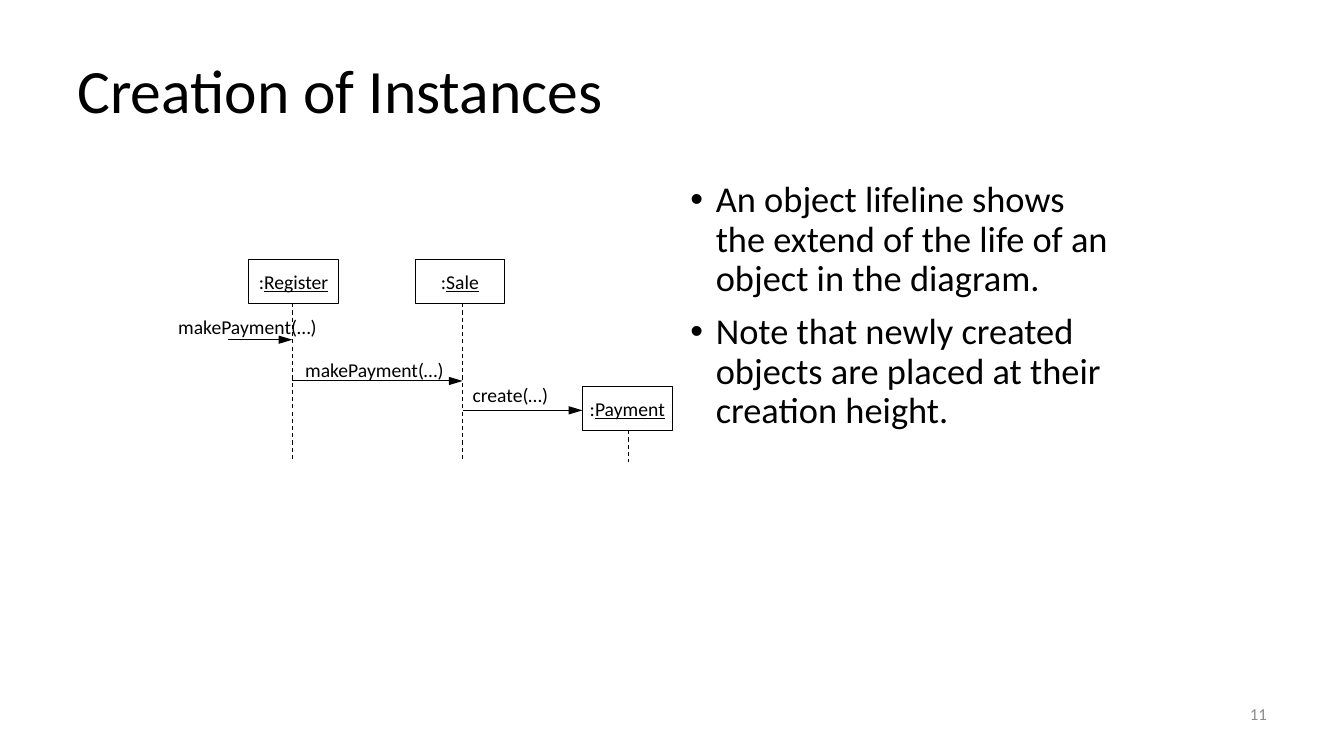
"""Build a slide with a sequence diagram on the creation of instances."""
from lxml import etree
from pptx import Presentation
from pptx.dml.color import RGBColor
from pptx.enum.dml import MSO_LINE
from pptx.enum.shapes import MSO_CONNECTOR, MSO_SHAPE
from pptx.enum.text import MSO_ANCHOR, MSO_AUTO_SIZE, PP_ALIGN
from pptx.oxml.ns import qn
from pptx.util import Cm, Pt

BLACK = RGBColor(0x00, 0x00, 0x00)
WHITE = RGBColor(0xFF, 0xFF, 0xFF)
GRAY = RGBColor(0x8C, 0x8C, 0x8C)
FONT = "Calibri"
LEFT, CENTER, RIGHT = PP_ALIGN.LEFT, PP_ALIGN.CENTER, PP_ALIGN.RIGHT
TOP, MIDDLE = MSO_ANCHOR.TOP, MSO_ANCHOR.MIDDLE
FIT = MSO_AUTO_SIZE.SHAPE_TO_FIT_TEXT
DASH = MSO_LINE.DASH
STRAIGHT = MSO_CONNECTOR.STRAIGHT
RECTANGLE = MSO_SHAPE.RECTANGLE


def write(s, *paragraphs, size=14, color=BLACK, align=LEFT, anchor=TOP,
          wrap=True, spacing=1.0, before=0, bullet=None, underlined=""):
    tf = s.text_frame
    tf.word_wrap = wrap
    tf.vertical_anchor = anchor
    for i, text in enumerate(paragraphs):
        p = tf.add_paragraph() if i else tf.paragraphs[0]
        p.alignment, p.line_spacing, p.space_before = align, spacing, Pt(before)
        if bullet:
            pPr = p._p.get_or_add_pPr()
            pPr.set("marL", str(Cm(0.64)))
            pPr.set("indent", str(-Cm(0.64)))
            etree.SubElement(pPr, qn("a:buFont"), typeface="Arial")
            etree.SubElement(pPr, qn("a:buChar"), char=bullet)
        for part in filter(None, (text, underlined)):
            r = p.add_run()
            r.text = part
            r.font.name, r.font.size = FONT, Pt(size)
            r.font.color.rgb = color
            if part == underlined:
                r.font.underline = True


def add_line(x1, y1, x2, y2, dashed=False, arrow=False):
    s = sp.add_connector(STRAIGHT, Cm(x1), Cm(y1), Cm(x2), Cm(y2))
    s.line.color.rgb = BLACK
    s.line.width = Pt(0.75)
    if dashed:
        s.line.dash_style = DASH
    if arrow:
        etree.SubElement(s.line._get_or_add_ln(), qn("a:tailEnd"),
                         type="triangle", w="med", len="lg")
    etree.SubElement(s._element.spPr, qn("a:effectLst"))


prs = Presentation()
prs.slide_width, prs.slide_height = Cm(33.87), Cm(19.05)
slide = prs.slides.add_slide(prs.slide_layouts[6])
sp = slide.shapes

title = sp.add_textbox(Cm(1.7), Cm(0.76), Cm(30.48), Cm(3.18))
write(title, "Creation of Instances", size=44, anchor=MIDDLE, spacing=0.9)

body = sp.add_textbox(Cm(17.15), Cm(4.45), Cm(11.2), Cm(12.57))
write(body,
      "An object lifeline shows the extend of the life of an object in the diagram.",
      "Note that newly created objects are placed at their creation height.",
      size=26, spacing=0.9, before=10, bullet="•")

number = sp.add_textbox(Cm(24.28), Cm(17.35), Cm(7.9), Cm(1.27))
write(number, "11", size=12, color=GRAY, align=RIGHT, anchor=MIDDLE)

BOX_W, BOX_H, LIFE_END = 2.26, 1.09, 11.63
REGISTER_X, SALE_X, PAYMENT_X = 7.37, 11.66, 15.85
PAYMENT_LEFT = 14.68

objects = [
    ("Register", 6.27, 6.55, REGISTER_X),
    ("Sale", 10.46, 6.55, SALE_X),
    ("Payment", PAYMENT_LEFT, 9.75, PAYMENT_X),
]
for name, left, top, life_x in objects:
    add_line(life_x, top + BOX_H, life_x, LIFE_END, dashed=True)
    s = sp.add_shape(RECTANGLE, Cm(left), Cm(top), Cm(BOX_W), Cm(BOX_H))
    s.shadow.inherit = False
    s.fill.solid()
    s.fill.fore_color.rgb = WHITE
    s.line.color.rgb = BLACK
    s.line.width = Pt(0.75)
    write(s, ":", underlined=name, align=CENTER, anchor=MIDDLE, wrap=False)

messages = [
    ("makePayment(…)", 4.24, 7.82, 4.04, 5.74, REGISTER_X, 8.56),
    ("makePayment(…)", 7.44, 8.89, 4.04, REGISTER_X, SALE_X, 9.6),
    ("create(…)", 11.66, 9.53, 2.44, SALE_X, PAYMENT_LEFT, 10.34),
]
for text, left, top, width, start, end, y in messages:
    add_line(start, y, end, y, arrow=True)
    s = sp.add_textbox(Cm(left), Cm(top), Cm(width), Cm(0.86))
    write(s, text, wrap=False)
    s.text_frame.auto_size = FIT

prs.save("out.pptx")
